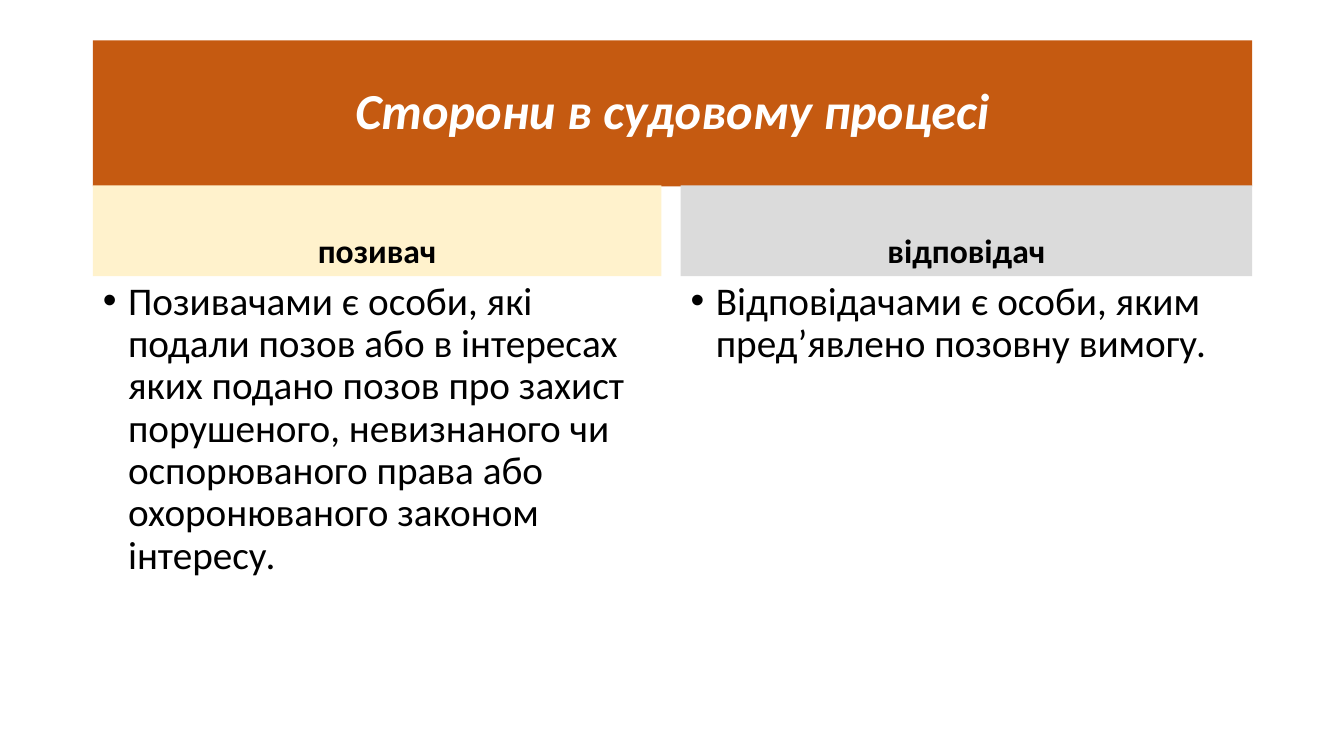
"""Build a slide comparing the two parties in court proceedings."""
from pptx import Presentation
from pptx.dml.color import RGBColor
from pptx.enum.text import MSO_ANCHOR, MSO_AUTO_SIZE, PP_ALIGN
from pptx.util import Inches, Pt

TITLE = "Сторони в судовому процесі"
PARTIES = [
    {
        "name": "позивач",
        "definition": "Позивачами є особи, які подали позов або в інтересах яких "
                      "подано позов про захист порушеного, невизнаного чи "
                      "оспорюваного права або охоронюваного законом інтересу.",
        "fill": "FFF2CC", "left": 0.92, "width": 5.64,
    },
    {
        "name": "відповідач",
        "definition": "Відповідачами є особи, яким пред’явлено позовну вимогу.",
        "fill": "DBDBDB", "left": 6.75, "width": 5.67,
    },
]
TITLE_BOX = (0.92, 0.4, 11.5, 1.45)
NAME_TOP, NAME_HEIGHT, DEFINITION_HEIGHT = 1.84, 0.9, 4.03
BULLET_INDENT = 0.25


def color(hex_code):
    return RGBColor.from_string(hex_code)


def fill_placeholder(holder, box, text, size, anchor, align, font_color="000000",
                     fill=None, bold=False, italic=False, space_before=10):
    holder.left, holder.top, holder.width, holder.height = map(Inches, box)
    if fill:
        holder.fill.solid()
        holder.fill.fore_color.rgb = color(fill)
    frame = holder.text_frame
    frame.text = text
    frame.word_wrap = True
    frame.auto_size = MSO_AUTO_SIZE.NONE
    frame.vertical_anchor = anchor
    paragraph = frame.paragraphs[0]
    paragraph.alignment = align
    paragraph.line_spacing = 0.9
    paragraph.space_before = Pt(space_before)
    font = paragraph.runs[0].font
    font.name, font.size = "Calibri", Pt(size)
    font.bold, font.italic = bold, italic
    font.color.rgb = color(font_color)
    return paragraph


def main():
    deck = Presentation()
    deck.slide_width, deck.slide_height = Inches(13.33), Inches(7.5)
    comparison = deck.slide_layouts.get_by_name("Comparison")
    slide = deck.slides.add_slide(comparison)
    for footer in [p for p in slide.placeholders if p.placeholder_format.idx >= 10]:
        footer.element.getparent().remove(footer.element)

    fill_placeholder(slide.shapes.title, TITLE_BOX, TITLE, 36, MSO_ANCHOR.MIDDLE,
                     PP_ALIGN.CENTER, "FFFFFF", "C55A11", bold=True, italic=True,
                     space_before=0)

    for column, party in enumerate(PARTIES):
        left, width = party["left"], party["width"]
        name = slide.placeholders[1 + 2 * column]
        definition = slide.placeholders[2 + 2 * column]
        fill_placeholder(name, (left, NAME_TOP, width, NAME_HEIGHT), party["name"],
                         24, MSO_ANCHOR.BOTTOM, PP_ALIGN.CENTER,
                         fill=party["fill"], bold=True)
        definition_box = (left, NAME_TOP + NAME_HEIGHT, width, DEFINITION_HEIGHT)
        bullet = fill_placeholder(definition, definition_box, party["definition"],
                                  28, MSO_ANCHOR.TOP, PP_ALIGN.LEFT)
        properties = bullet._p.get_or_add_pPr()
        properties.set("marL", str(Inches(BULLET_INDENT)))
        properties.set("indent", str(-Inches(BULLET_INDENT)))

    deck.save("out.pptx")


if __name__ == "__main__":
    main()
